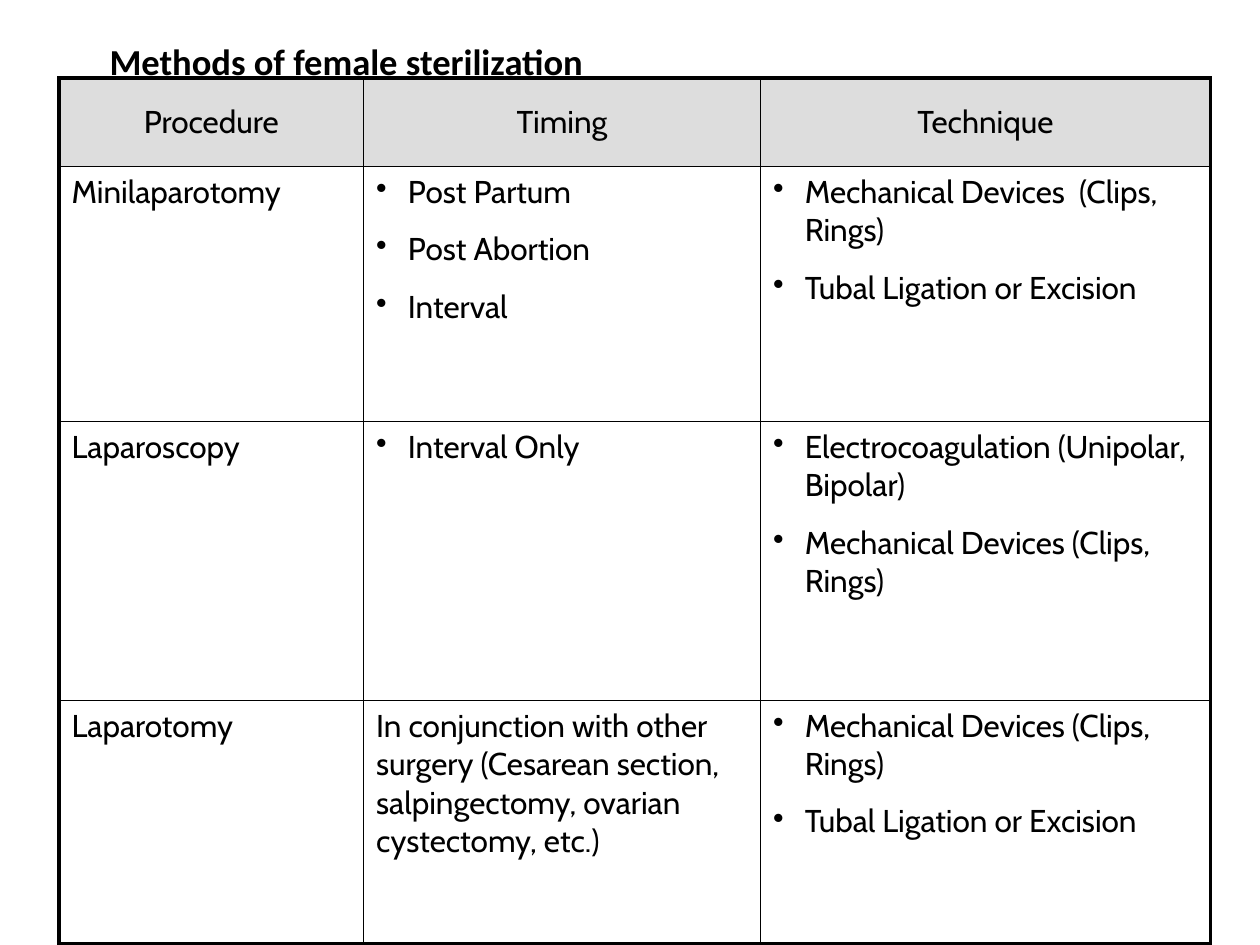
import pptx
import pptx.dml.color
import pptx.enum.text
import pptx.oxml.ns
import pptx.util
from lxml import etree
from pptx.util import Cm

BLACK = pptx.dml.color.RGBColor(0x00, 0x00, 0x00)
HEADER_GRAY = pptx.dml.color.RGBColor(0xDD, 0xDD, 0xDD)

TITLE = "Methods of female sterilization"
HEADERS = ["Procedure", "Timing", "Technique"]
# A string is plain text; a list is a set of bullets.
METHODS = [
    ["Minilaparotomy",
     ["Post Partum", "Post Abortion", "Interval"],
     ["Mechanical Devices  (Clips, Rings)", "Tubal Ligation or Excision"]],
    ["Laparoscopy",
     ["Interval Only"],
     ["Electrocoagulation (Unipolar, Bipolar)",
      "Mechanical Devices (Clips, Rings)"]],
    ["Laparotomy",
     "In conjunction with other surgery (Cesarean section, "
     "salpingectomy, ovarian cystectomy, etc.)",
     ["Mechanical Devices (Clips, Rings)", "Tubal Ligation or Excision"]],
]
COLUMN_WIDTHS = [Cm(6.14), Cm(8), Cm(9.07)]
ROW_HEIGHTS = [Cm(1.79), Cm(5.14), Cm(5.62), Cm(4.9)]
INNER_BORDER = pptx.util.Pt(1)
OUTER_BORDER = pptx.util.Pt(2.25)


def add_element(parent, tag, **attributes):
    return etree.SubElement(parent, pptx.oxml.ns.qn(tag), attributes)


def write_text(paragraph, text, *, font="Cabin", size=18, bold=False,
               align=pptx.enum.text.PP_ALIGN.LEFT, before=0, after=0,
               bullet=False, baseline=None):
    paragraph.alignment = align
    paragraph.space_before = pptx.util.Pt(before)
    paragraph.space_after = pptx.util.Pt(after)
    run = paragraph.add_run()
    run.text = text
    run.font.name = font
    run.font.size = pptx.util.Pt(size)
    run.font.bold = bold
    run.font.color.rgb = BLACK
    if baseline is not None:
        run.font._element.set("baseline", str(baseline * 1000))
    if bullet:
        properties = paragraph._p.get_or_add_pPr()
        indent = Cm(0.64)
        properties.set("marL", str(indent))
        properties.set("indent", str(-indent))
        add_element(properties, "a:buChar", char="•")


def set_borders(cell, **widths):
    """Draw black borders; the sides are named L, R, T and B, in that order."""
    properties = cell._tc.get_or_add_tcPr()
    for index, (side, width) in enumerate(widths.items()):
        line = add_element(properties, f"a:ln{side}", w=str(width))
        fill = add_element(line, "a:solidFill")
        add_element(fill, "a:srgbClr", val=str(BLACK))
        properties.insert(index, line)


def fill_cell(cell, content, is_header):
    bulleted = isinstance(content, list)
    frame = cell.text_frame
    for index, text in enumerate(content if bulleted else [content]):
        paragraph = frame.add_paragraph() if index else frame.paragraphs[0]
        align = pptx.enum.text.PP_ALIGN.CENTER if is_header else pptx.enum.text.PP_ALIGN.LEFT
        write_text(paragraph, text, align=align, before=7.2, after=3.6, bullet=bulleted)
    if is_header:
        cell.vertical_anchor = pptx.enum.text.MSO_ANCHOR.MIDDLE
        cell.fill.solid()
        cell.fill.fore_color.rgb = HEADER_GRAY
    else:
        cell.fill.background()


def add_methods_table(slide):
    rows = [HEADERS] + METHODS
    last_row, last_column = len(rows) - 1, len(HEADERS) - 1
    table = slide.shapes.add_table(
        len(rows), len(HEADERS), Cm(1.19), Cm(1.57),
        sum(COLUMN_WIDTHS), sum(ROW_HEIGHTS)).table
    table.first_row = False
    table.horz_banding = False
    for column, width in zip(table.columns, COLUMN_WIDTHS):
        column.width = width
    for row, height in zip(table.rows, ROW_HEIGHTS):
        row.height = height

    def border(is_outer):
        return OUTER_BORDER if is_outer else INNER_BORDER

    for r, contents in enumerate(rows):
        for c, content in enumerate(contents):
            cell = table.cell(r, c)
            fill_cell(cell, content, is_header=r == 0)
            set_borders(cell, L=border(c == 0), R=border(c == last_column),
                        T=border(r == 0), B=border(r == last_row))


def add_title(slide):
    title = slide.shapes.add_textbox(Cm(1.96), Cm(0.51), Cm(17.83), Cm(1.27))
    title.text_frame.word_wrap = True
    write_text(title.text_frame.paragraphs[0], TITLE, font="Calibri", size=36,
               bold=True, baseline=30)


def main():
    presentation = pptx.Presentation()
    presentation.slide_width = Cm(25.4)
    presentation.slide_height = Cm(19.05)
    slide = presentation.slides.add_slide(presentation.slide_layouts[6])
    add_methods_table(slide)
    add_title(slide)
    presentation.save("out.pptx")


if __name__ == "__main__":
    main()
